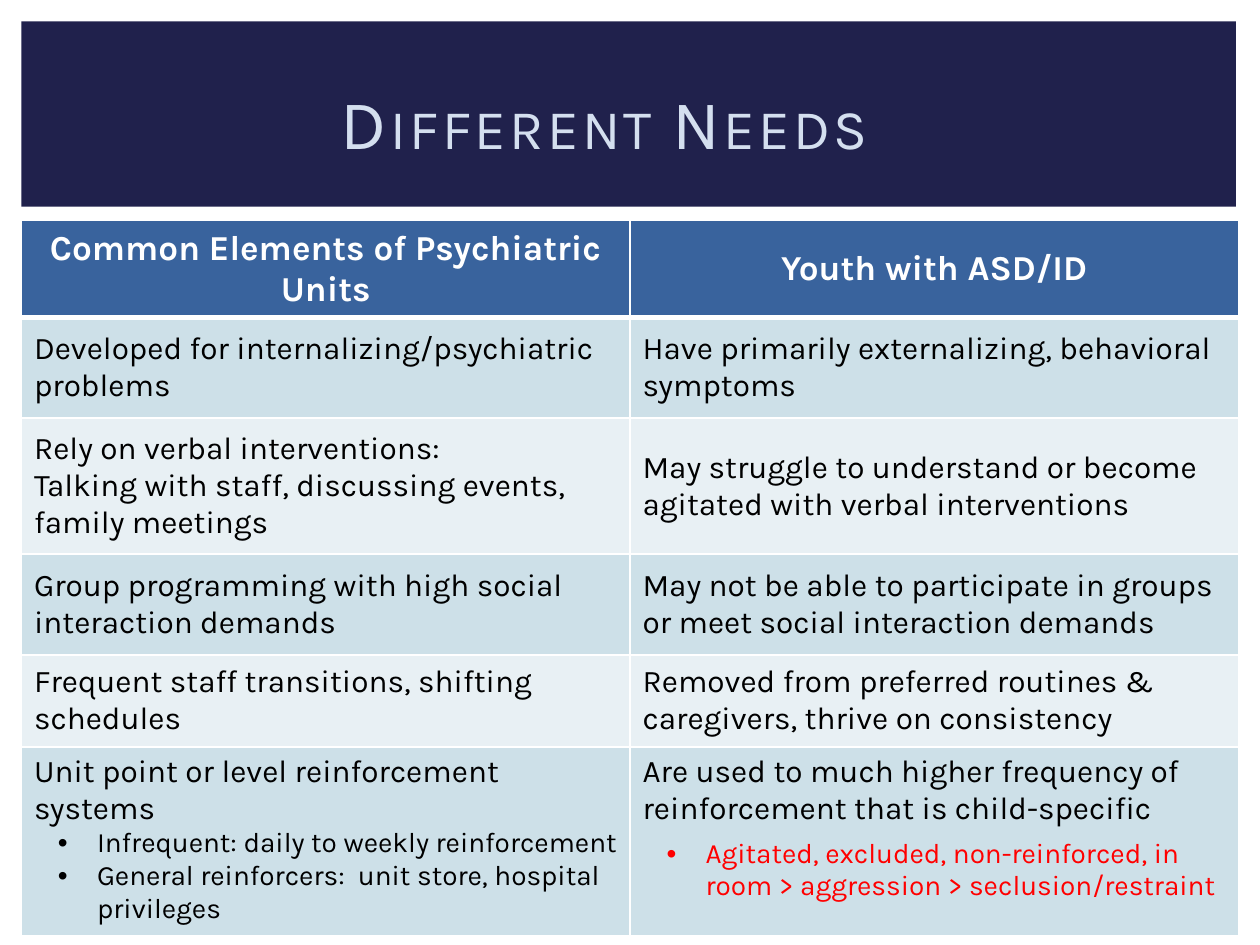
from dataclasses import dataclass

from lxml import etree
from pptx import Presentation
from pptx import util as u
from pptx.dml.color import RGBColor
from pptx.enum import shapes, text
from pptx.oxml.ns import qn

COLORS = {
    "navy": "20214C", "pale": "D4DFEF", "header": "39639D", "band": "CDE0E8",
    "light": "E8F0F4", "white": "FFFFFF", "black": "000000", "red": "FF0000",
}
COLUMNS, ROWS = 100, 75  # slide grid


@dataclass
class Item:
    """One paragraph of a table cell."""
    words: str
    size: int = 18
    color: str = "black"
    bold: bool = False
    centered: bool = False
    bullet: bool = False
    space_after: int = 0


def heading(words):
    return Item(words, size=20, color="white", bold=True, centered=True)


def bullet(words, color="black"):
    return Item(words, size=16, color=color, bullet=True)


def rgb(name):
    return RGBColor.from_string(COLORS[name])


class Deck:
    font = "Karla"

    def __init__(self):
        self.presentation = Presentation()
        self.presentation.slide_width = u.Inches(10)
        self.presentation.slide_height = u.Inches(7.5)
        self.slide = self.presentation.slides.add_slide(self.presentation.slide_layouts[6])

    def across(self, columns):
        return round(self.presentation.slide_width * columns / COLUMNS)

    def down(self, rows):
        return round(self.presentation.slide_height * rows / ROWS)

    def box(self, left, top, width, height):
        return self.across(left), self.down(top), self.across(width), self.down(height)

    def run(self, paragraph, words, size, color, bold=False):
        run = paragraph.add_run()
        run.text = words
        run.font.name = self.font
        run.font.size = u.Pt(size)
        run.font.bold = bold
        run.font.color.rgb = rgb(color)
        return run

    def panel(self, place, color):
        shape = self.slide.shapes.add_shape(shapes.MSO_SHAPE.RECTANGLE, *self.box(*place))
        shape.shadow.inherit = False
        shape.fill.solid()
        shape.fill.fore_color.rgb = rgb(color)
        shape.line.fill.background()

    def title(self, place, words):
        """Add a centred title in spaced small capitals."""
        frame = self.slide.shapes.add_textbox(*self.box(*place)).text_frame
        frame.word_wrap = True
        frame.vertical_anchor = text.MSO_ANCHOR.MIDDLE
        paragraph = frame.paragraphs[0]
        paragraph.alignment = text.PP_ALIGN.CENTER
        properties = self.run(paragraph, words, 40, "pale").font._element
        properties.set("cap", "small")
        properties.set("spc", "200")

    def table(self, place, heights, content):
        """Add a table with a header row, banded body rows and a top-aligned last row."""
        frame = self.slide.shapes.add_table(len(content), len(content[0]), *self.box(*place))
        table = frame.table
        for column in table.columns:
            column.width = self.across(place[2] / len(content[0]))
        for index, (height, cells) in enumerate(zip(heights, content)):
            table.rows[index].height = self.down(height)
            fill = "header" if index == 0 else ("light", "band")[index % 2]
            last = index == len(content) - 1
            for cell, items in zip(table.rows[index].cells, cells):
                cell.vertical_anchor = text.MSO_ANCHOR.TOP if last else text.MSO_ANCHOR.MIDDLE
                self.borders(cell, top=3 if index == 1 else 1, bottom=3 if index == 0 else 1)
                cell.fill.solid()
                cell.fill.fore_color.rgb = rgb(fill)
                self.fill_cell(cell, items)

    def fill_cell(self, cell, items):
        frame = cell.text_frame
        for index, item in enumerate(items):
            paragraph = frame.add_paragraph() if index else frame.paragraphs[0]
            paragraph.alignment = text.PP_ALIGN.CENTER if item.centered else text.PP_ALIGN.LEFT
            paragraph.space_after = u.Pt(item.space_after)
            if item.bullet:
                self.mark(paragraph)
            self.run(paragraph, item.words, item.size, item.color, item.bold)

    def mark(self, paragraph):
        """Give a paragraph a hanging bullet."""
        properties = paragraph._p.get_or_add_pPr()
        properties.set("marL", str(u.Inches(0.5)))
        properties.set("indent", str(-u.Inches(0.31)))
        etree.SubElement(properties, qn("a:buFont"), typeface="Arial")
        etree.SubElement(properties, qn("a:buChar"), char="•")

    def borders(self, cell, top, bottom):
        properties = cell._tc.get_or_add_tcPr()
        for side, width in (("L", 1), ("R", 1), ("T", top), ("B", bottom)):
            line = etree.SubElement(properties, qn(f"a:ln{side}"), w=str(u.Pt(width)))
            fill = etree.SubElement(line, qn("a:solidFill"))
            etree.SubElement(fill, qn("a:srgbClr"), val=COLORS["white"])


CONTENT = [
    ([heading("Common Elements of Psychiatric Units")], [heading("Youth with ASD/ID")]),
    ([Item("Developed for internalizing/psychiatric problems")],
     [Item("Have primarily externalizing, behavioral symptoms")]),
    ([Item("Rely on verbal interventions:"),
      Item("Talking with staff, discussing events, family meetings")],
     [Item("May struggle to understand or become agitated with verbal interventions")]),
    ([Item("Group programming with high social interaction demands")],
     [Item("May not be able to participate in groups or meet social interaction demands")]),
    ([Item("Frequent staff transitions, shifting schedules")],
     [Item("Removed from preferred routines & caregivers, thrive on consistency")]),
    ([Item("Unit point or level reinforcement systems"),
      bullet("Infrequent: daily to weekly reinforcement"),
      bullet("General reinforcers:  unit store, hospital privileges")],
     [Item("Are used to much higher frequency of reinforcement that is child-specific",
           space_after=6),
      bullet("Agitated, excluded, non-reinforced, in room > aggression > seclusion/restraint",
             "red")]),
]


def main():
    deck = Deck()
    deck.panel((1.7, 17.9, 96.6, 55.2), "pale")
    deck.panel((1.7, 1.7, 96.4, 14.7), "navy")
    deck.title((4.2, 3.9, 91.7, 11.5), "Different Needs")
    deck.table((1.7, 17.5, 96.6, 55.5), (6.7, 8, 10.8, 8, 7.3, 14.7), CONTENT)
    deck.presentation.save("out.pptx")


if __name__ == "__main__":
    main()
